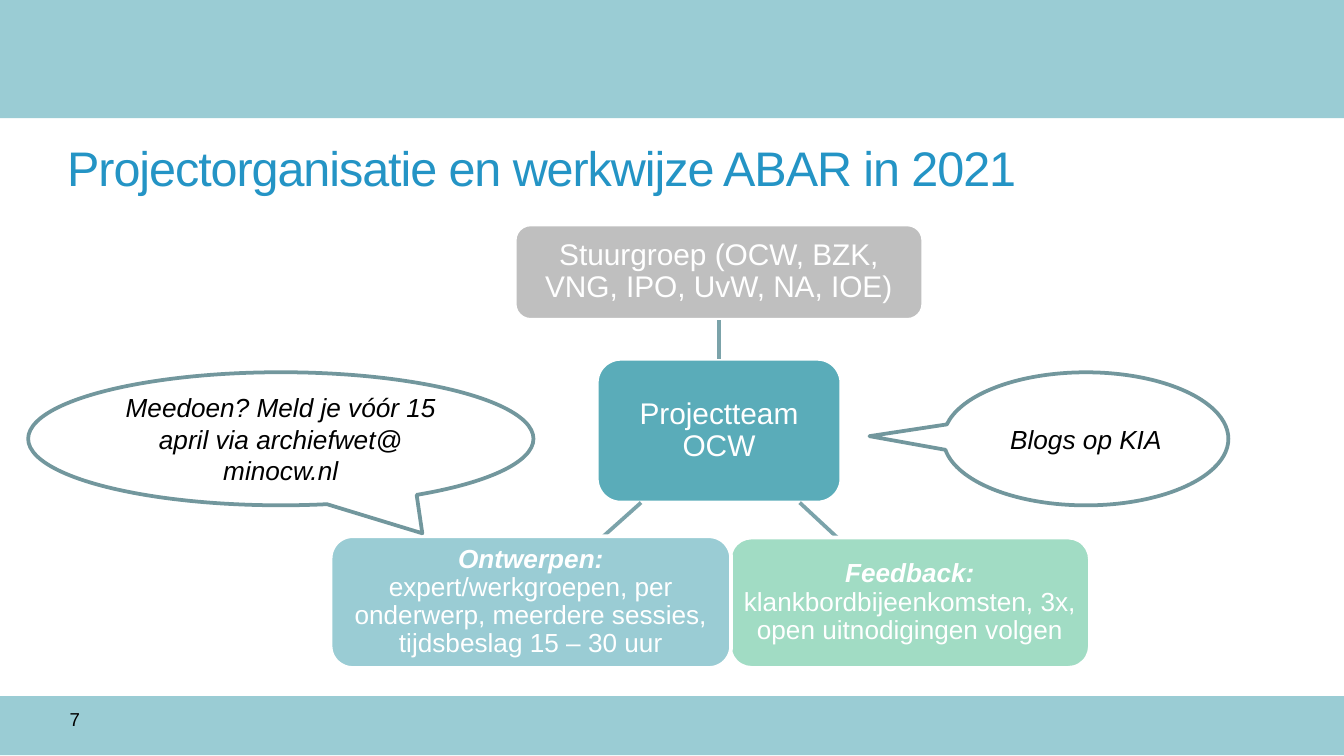
from dataclasses import dataclass

from lxml import etree
from pptx import Presentation
from pptx import util as u
from pptx.dml.color import RGBColor
from pptx.enum import shapes, text
from pptx.oxml import ns


@dataclass(frozen=True)
class Theme:
    font: str = "Arial"
    white: str = "FFFFFF"
    black: str = "000000"
    band: str = "9ACCD4"
    title: str = "2494C5"
    team: str = "5AACB9"
    steering: str = "BFBFBF"
    feedback: str = "A1DCC4"
    link: str = "7BA3AA"
    callout: str = "72979D"
    title_size: float = 26
    box_size: float = 16
    detail_size: float = 14
    number_size: float = 10
    line_width: float = 2


def add_text(paragraph, content, *, font, size, color, bold=False, italic=False, spacing=None):
    run = paragraph.add_run()
    run.text = content
    run.font.name = font
    run.font.size = u.Pt(size)
    run.font.bold = bold
    run.font.italic = italic
    run.font.color.rgb = RGBColor.from_string(color)
    if spacing is not None:
        run.font._element.set("spc", str(round(spacing * 100)))


class SlideBuilder:
    def __init__(self, slide, theme):
        self.slide = slide
        self.theme = theme

    def add_shape(self, kind, position, fill=None, line=None):
        shape = self.slide.shapes.add_shape(kind, *map(u.Inches, position))
        shape.shadow.inherit = False
        if fill:
            shape.fill.solid()
            shape.fill.fore_color.rgb = RGBColor.from_string(fill)
        else:
            shape.fill.background()
        if line:
            shape.line.color.rgb = RGBColor.from_string(line)
            shape.line.width = u.Pt(self.theme.line_width)
        else:
            shape.line.fill.background()
        return shape

    def add_band(self, top, height):
        self.add_shape(shapes.MSO_SHAPE.RECTANGLE, (0, top, 10, height), self.theme.band)

    def set_title(self, content, position):
        title = self.slide.shapes.title
        title.left, title.top, title.width, title.height = map(u.Inches, position)
        frame = title.text_frame
        frame.vertical_anchor = text.MSO_ANCHOR.MIDDLE
        frame.auto_size = text.MSO_AUTO_SIZE.NONE
        paragraph = frame.paragraphs[0]
        paragraph.alignment = text.PP_ALIGN.LEFT
        add_text(paragraph, content, font=self.theme.font, size=self.theme.title_size,
                 color=self.theme.title, spacing=-0.6)

    def add_number(self, content, position):
        frame = self.slide.shapes.add_textbox(*map(u.Inches, position)).text_frame
        frame.word_wrap = True
        add_text(frame.paragraphs[0], content, font=self.theme.font,
                 size=self.theme.number_size, color=self.theme.black)

    def add_box(self, content, position, fill, size, heading=None):
        shape = self.add_shape(shapes.MSO_SHAPE.ROUNDED_RECTANGLE, position, fill, self.theme.white)
        frame = shape.text_frame
        frame.word_wrap = True
        frame.vertical_anchor = text.MSO_ANCHOR.MIDDLE
        frame.margin_left = frame.margin_right = u.Inches(0.04)
        frame.margin_top = frame.margin_bottom = u.Inches(0.04)
        paragraph = frame.paragraphs[0]
        paragraph.alignment = text.PP_ALIGN.CENTER
        paragraph.line_spacing = 0.9
        style = dict(font=self.theme.font, size=size, color=self.theme.white)
        if heading:
            add_text(paragraph, heading + " ", bold=True, italic=True, **style)
        add_text(paragraph, content, **style)
        return shape

    def add_callout(self, lines, position, tip):
        shape = self.add_shape(shapes.MSO_SHAPE.OVAL_CALLOUT, position, line=self.theme.callout)
        shape.adjustments[0], shape.adjustments[1] = tip
        frame = shape.text_frame
        frame.word_wrap = True
        frame.vertical_anchor = text.MSO_ANCHOR.MIDDLE
        for index, content in enumerate(lines):
            paragraph = frame.add_paragraph() if index else frame.paragraphs[0]
            paragraph.alignment = text.PP_ALIGN.CENTER
            add_text(paragraph, content, font=self.theme.font, size=self.theme.detail_size,
                     color=self.theme.black, italic=True)

    def add_link(self, start, end):
        connector = self.slide.shapes.add_connector(
            shapes.MSO_CONNECTOR.STRAIGHT, *map(u.Inches, start + end))
        connector.line.color.rgb = RGBColor.from_string(self.theme.link)
        connector.line.width = u.Pt(self.theme.line_width)
        etree.SubElement(connector._element.spPr, ns.qn("a:effectLst"))
        return connector


def main():
    theme = Theme()
    presentation = Presentation()
    presentation.slide_width = u.Inches(10)
    presentation.slide_height = presentation.slide_width * 9 // 16
    slide = presentation.slides.add_slide(presentation.slide_layouts[5])
    builder = SlideBuilder(slide, theme)

    builder.add_band(5.18, 0.44)
    builder.add_band(0, 0.88)
    builder.add_number("7", (0.42, 5.22, 0.78, 0.3))
    builder.set_title("Projectorganisatie en werkwijze ABAR in 2021", (0.4, 1.01, 8.82, 0.47))

    team = builder.add_box("Projectteam OCW", (4.44, 2.67, 1.82, 1.07), theme.team, theme.box_size)
    steering = builder.add_box("Stuurgroep (OCW, BZK, VNG, IPO, UvW, NA, IOE)",
                               (3.83, 1.67, 3.04, 0.71), theme.steering, theme.box_size)
    steering_link = builder.add_link((5.35, 2.67), (5.35, 2.38))
    steering_link.begin_connect(team, 0)
    steering_link.end_connect(steering, 2)
    builder.add_link((5.95, 3.74), (6.23, 4))
    builder.add_link((4.77, 3.74), (4.49, 3.99))

    builder.add_box("klankbordbijeenkomsten, 3x, open uitnodigingen volgen",
                    (5.43, 4, 2.68, 0.97), theme.feedback, theme.detail_size, heading="Feedback:")
    builder.add_box("expert/werkgroepen, per onderwerp, meerdere sessies, tijdsbeslag 15 – 30 uur",
                    (2.46, 3.99, 2.98, 0.98), theme.band, theme.detail_size, heading="Ontwerpen:")
    builder.add_callout(["Meedoen? Meld je vóór 15 april via archiefwet@", "minocw.nl"],
                        (0.21, 2.77, 3.76, 0.99), (0.28, 0.71))
    builder.add_callout(["Blogs op KIA"], (7.02, 2.77, 2.12, 0.99), (-0.76, -0.02))

    presentation.save("out.pptx")


if __name__ == "__main__":
    main()
